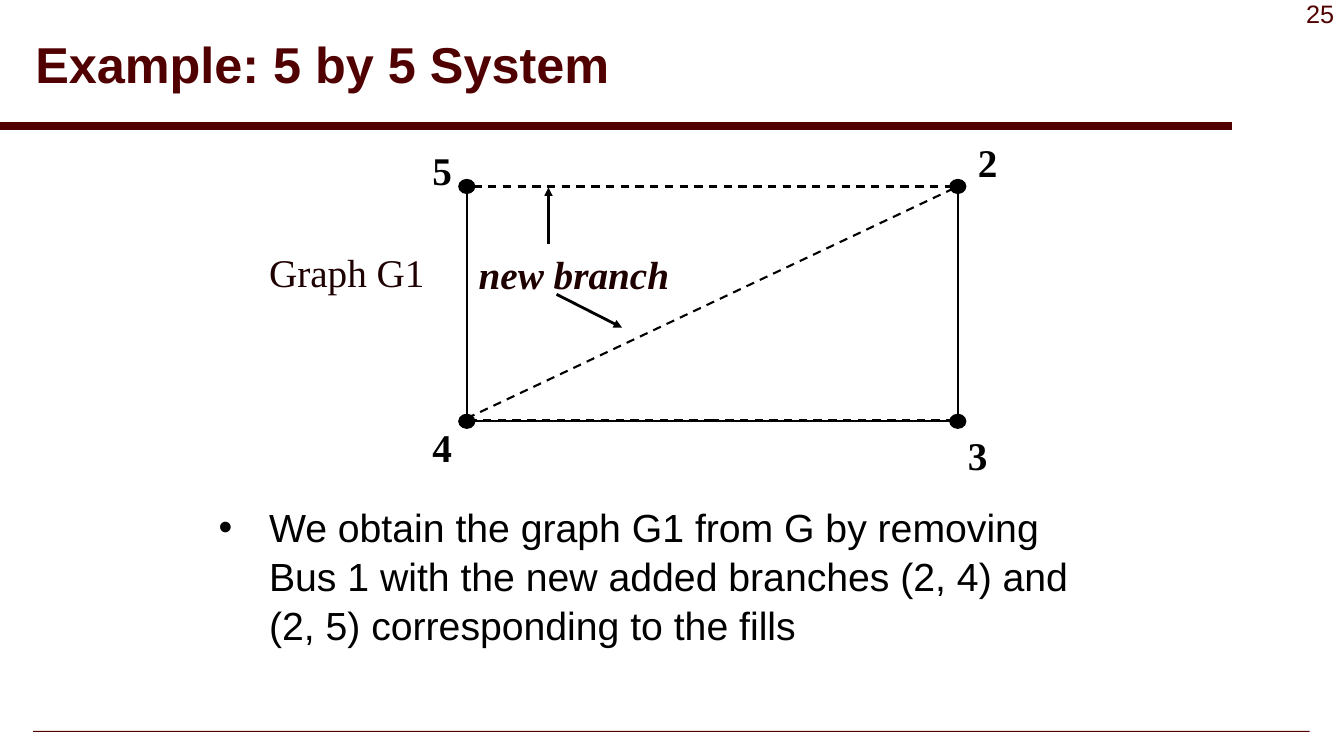
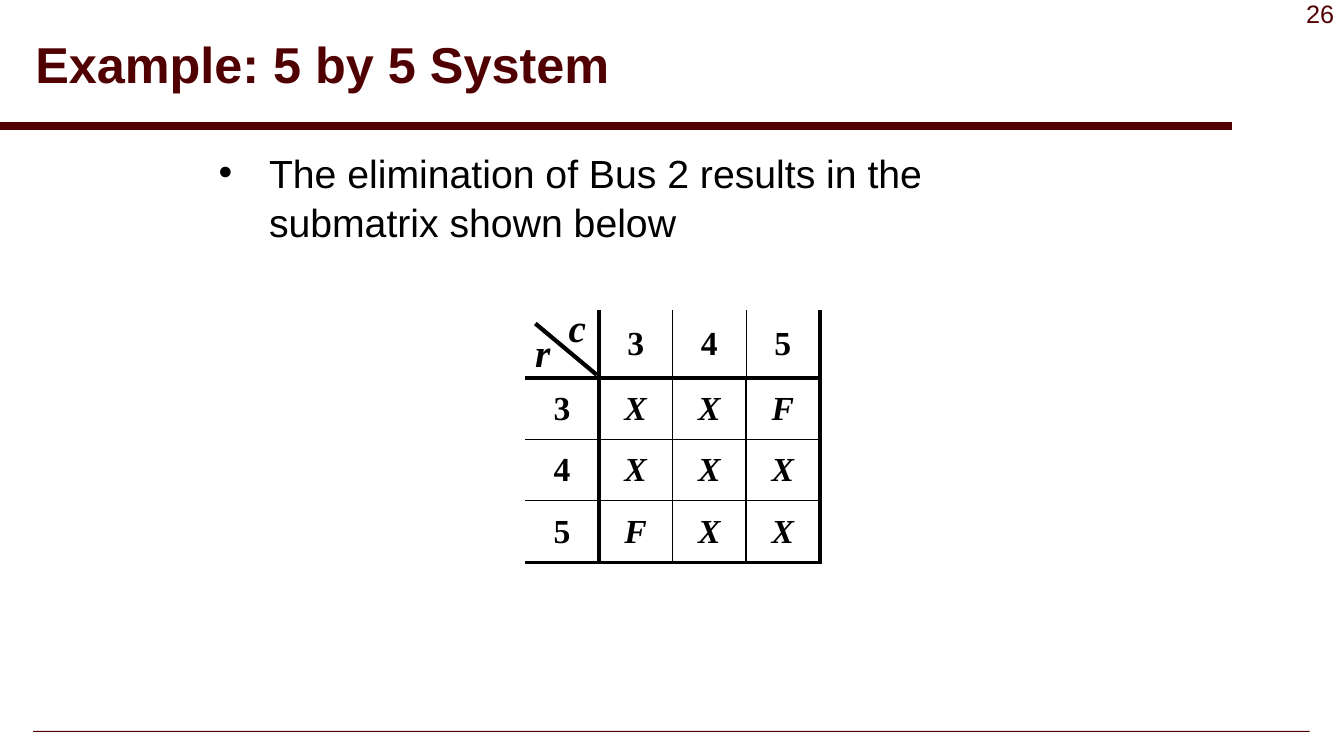
"""Build two slides on eliminating buses from a 5 by 5 system."""
from lxml import etree
from pptx import Presentation
from pptx import util as u
from pptx.dml.color import RGBColor
from pptx.enum import dml, shapes, text
from pptx.oxml.ns import qn

COLORS = {"maroon": "500000", "dark": "1E0000", "black": "000000"}
SANS, SERIF = "Arial", "Times New Roman"
TITLE = "Example: 5 by 5 System"
LEFT, RIGHT, TOP, BOTTOM = 4.63, 9.5, 1.85, 4.18
MATRIX = [["", "3", "4", "5"],
          ["3", "X", "X", "F"],
          ["4", "X", "X", "X"],
          ["5", "F", "X", "X"]]


def rgb(name):
    """Return a palette colour."""
    return RGBColor.from_string(COLORS[name])


def box(left, top, width, height):
    """Return a position and size in inches."""
    return [u.Inches(v) for v in (left, top, width, height)]


def write(tf, content, size=28, font=SERIF, color="black", bold=False,
          italic=False, align=text.PP_ALIGN.LEFT, spacing=None, bullet=False):
    """Write one formatted paragraph into a text frame."""
    p = tf.paragraphs[0]
    p.alignment = align
    if spacing:
        p.line_spacing = spacing
    if bullet:
        pPr = p._p.get_or_add_pPr()
        pPr.set("marL", str(u.Inches(0.5)))
        pPr.set("indent", str(-u.Inches(0.5)))
        etree.SubElement(pPr, qn("a:buFont"), typeface=SANS)
        etree.SubElement(pPr, qn("a:buChar"), char="•")
    r = p.add_run()
    r.text = content
    r.font.size, r.font.name = u.Pt(size), font
    r.font.bold, r.font.italic = bold, italic
    r.font.color.rgb = rgb(color)


def add_text(s, content, at, wrap=False, **fmt):
    """Add a text box holding one paragraph."""
    tf = s.shapes.add_textbox(*box(*at)).text_frame
    tf.word_wrap = wrap
    write(tf, content, **fmt)


def add_bullet(s, content, at):
    """Add a bulleted body text."""
    add_text(s, content, at, wrap=True, font=SANS, spacing=1.04, bullet=True)


def add_line(s, start, end, width=1.5, color="black", dash=False, arrow=False):
    """Add a straight line, dashed or with an arrowhead if asked."""
    ends = [u.Inches(v) for v in (*start, *end)]
    line = s.shapes.add_connector(shapes.MSO_CONNECTOR.STRAIGHT, *ends)
    line.line.width = u.Pt(width)
    line.line.color.rgb = rgb(color)
    if dash:
        line.line.dash_style = dml.MSO_LINE.DASH
    if arrow:
        etree.SubElement(line.line._get_or_add_ln(), qn("a:tailEnd"), type="triangle")
    etree.SubElement(line._element.spPr, qn("a:effectLst"))


def add_shape(s, kind, at, fill=None, width=0, dash=False):
    """Add a preset shape with an optional fill and black outline."""
    sp = s.shapes.add_shape(kind, *box(*at))
    sp.shadow.inherit = False
    if fill:
        sp.fill.solid()
        sp.fill.fore_color.rgb = rgb(fill)
    else:
        sp.fill.background()
    if width:
        sp.line.width = u.Pt(width)
        sp.line.color.rgb = rgb("black")
    else:
        sp.line.fill.background()
    if dash:
        sp.line.dash_style = dml.MSO_LINE.DASH


def add_slide(prs, number):
    """Add a slide with the shared title, rules and page number."""
    s = prs.slides.add_slide(prs.slide_layouts[5])
    title = s.shapes.title
    title.left, title.top, title.width, title.height = box(0.25, 0.08, 11.92, 1.17)
    title.text_frame.vertical_anchor = text.MSO_ANCHOR.MIDDLE
    write(title.text_frame, TITLE, size=36, font=SANS, color="maroon",
          bold=True, spacing=0.9)
    add_shape(s, shapes.MSO_SHAPE.RECTANGLE, (0.33, 7.25, 12.66, 0.01), fill="maroon")
    add_line(s, (0, 1.25), (12.22, 1.25), width=6, color="maroon")
    add_text(s, str(number), (12.13, -0.07, 1.2, 0.4), wrap=True, size=18,
             font=SANS, color="maroon", align=text.PP_ALIGN.RIGHT)
    return s


def set_border(cell, side, width):
    """Set one cell border, or clear it when the width is zero."""
    ln = etree.SubElement(cell._tc.get_or_add_tcPr(), qn(f"a:ln{side}"),
                          w=str(u.Pt(width)))
    if width:
        fill = etree.SubElement(ln, qn("a:solidFill"))
        etree.SubElement(fill, qn("a:srgbClr"), val=COLORS["black"])
    else:
        etree.SubElement(ln, qn("a:noFill"))


def edge_width(index, header):
    """Return the width of a grid line from its index."""
    if index == 0:
        return 0
    if index in (1, len(MATRIX)):
        return 3
    return 0.75 if header else 1


def add_matrix(s, at):
    """Add the matrix as a ruled table."""
    size = len(MATRIX)
    table = s.shapes.add_table(size, size, *box(*at)).table
    table.first_row = table.horz_banding = False
    for i, row in enumerate(MATRIX):
        table.rows[i].height = u.Inches(0.61 if i else 0.67)
        for j, value in enumerate(row):
            cell = table.cell(i, j)
            cell.vertical_anchor = text.MSO_ANCHOR.MIDDLE
            if value:
                write(cell.text_frame, value, size=24, bold=True,
                      italic=value.isalpha(), align=text.PP_ALIGN.CENTER)
            for side, index, header in (("L", j, i == 0), ("R", j + 1, i == 0),
                                        ("T", i, j == 0), ("B", i + 1, j == 0)):
                set_border(cell, side, edge_width(index, header))
            cell.fill.background()


def add_graph(s):
    """Draw graph G1 with its buses, branches and labels."""
    add_shape(s, shapes.MSO_SHAPE.RECTANGLE, (LEFT, TOP, RIGHT - LEFT, 2.32),
              width=1.5, dash=True)
    corners = [(LEFT, TOP), (LEFT, BOTTOM), (RIGHT, BOTTOM), (RIGHT, TOP)]
    for start, end in zip(corners, corners[1:]):
        add_line(s, start, end)
    add_line(s, (LEFT, 4.15), (RIGHT, TOP), dash=True)
    labels = zip("5432", [(4.19, 1.4), (4.19, 4.15), (9.5, 4.23), (9.6, 1.32)])
    for (x, y), (name, place) in zip(corners, labels):
        add_shape(s, shapes.MSO_SHAPE.OVAL, (x - 0.08, y - 0.07, 0.16, 0.14),
                  fill="black", width=0.75)
        add_text(s, name, (*place, 0.48, 0.39), bold=True)
    add_text(s, "Graph G1", (2.57, 2.41, 1.8, 0.53), color="dark")
    add_text(s, "new branch", (4.65, 2.43, 2.44, 0.39), color="dark",
             bold=True, italic=True)
    for start, end in (((5.44, 2.42), (5.44, 1.86)), ((5.52, 2.92), (6.17, 3.25))):
        add_line(s, start, end, width=2, arrow=True)


def main():
    """Build and save the presentation."""
    prs = Presentation()
    prs.slide_width, prs.slide_height = u.Inches(13.33), u.Inches(7.5)

    s = add_slide(prs, 25)
    add_graph(s)
    add_bullet(s, "We obtain the graph G1 from G by removing Bus 1 with the new "
               "added branches (2, 4) and (2, 5) corresponding to the fills",
               (2.07, 4.93, 8.85, 1.57))

    s = add_slide(prs, 26)
    add_bullet(s, "The elimination of Bus 2 results in the submatrix shown below",
               (2.07, 1.41, 8.27, 1.04))
    add_matrix(s, (5.21, 3.08, 2.92, 2.5))
    for name, left, top in (("r", 5.21, 3.21), ("c", 5.54, 2.96)):
        add_text(s, name, (left, top, 0.21, 0.57), bold=True, italic=True)
    add_line(s, (5.92, 3.72), (5.31, 3.21), width=3)
    prs.save("out.pptx")


if __name__ == "__main__":
    main()
